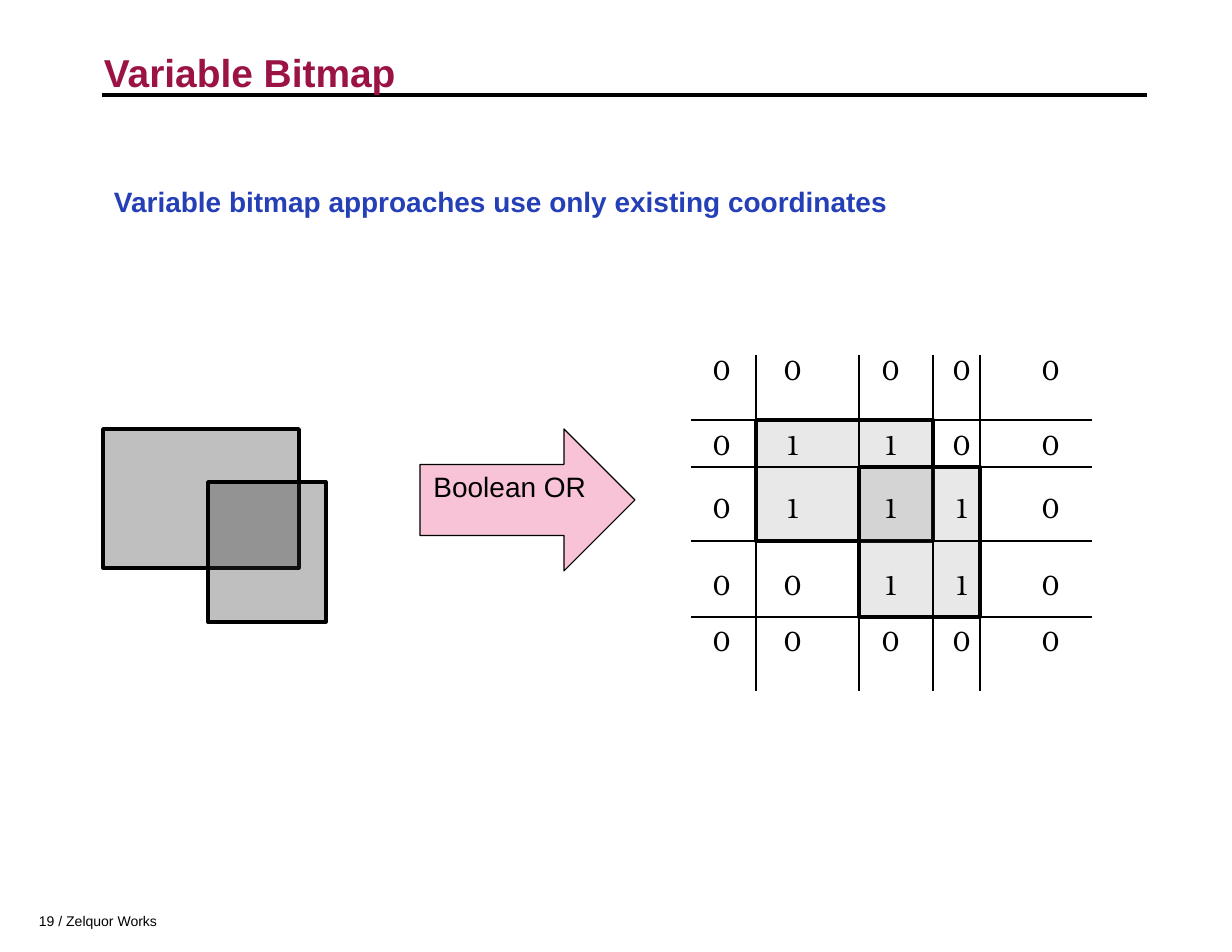
from lxml import etree
from pptx import Presentation
from pptx.dml.color import RGBColor
from pptx.enum.shapes import MSO_CONNECTOR, MSO_SHAPE
from pptx.enum.text import MSO_ANCHOR, PP_ALIGN
from pptx.oxml.ns import qn
from pptx.util import Emu, Pt

PIXELS_PER_INCH = 112
BLACK = "000000"


def px(length):
    return Emu(round(length * 914400 / PIXELS_PER_INCH))


def color(hex_text):
    return RGBColor.from_string(hex_text)


def add_span(para, text, size, hex_text=BLACK, font="Arial", bold=False):
    span = para.add_run()
    span.text = text
    span.font.size = Pt(size)
    span.font.name = font
    span.font.bold = bold
    span.font.color.rgb = color(hex_text)


def add_text_box(page, box, margins=(11, 6), wrap=True):
    """Add an empty text box and return its first paragraph."""
    frame = page.shapes.add_textbox(*map(px, box)).text_frame
    frame.word_wrap = wrap
    frame.vertical_anchor = MSO_ANCHOR.TOP
    frame.margin_left = frame.margin_right = px(margins[0])
    frame.margin_top = frame.margin_bottom = px(margins[1])
    return frame.paragraphs[0]


def add_line(page, start, end, width=0.75):
    line = page.shapes.add_connector(MSO_CONNECTOR.STRAIGHT, *map(px, start + end))
    line.line.color.rgb = color(BLACK)
    line.line.width = Pt(width)
    etree.SubElement(line._element.spPr, qn("a:effectLst"))


def add_filled_shape(page, kind, box, fill, line_width, opacity=100):
    shape = page.shapes.add_shape(kind, *map(px, box))
    shape.shadow.inherit = False
    shape.fill.solid()
    shape.fill.fore_color.rgb = color(fill)
    shape.line.color.rgb = color(BLACK)
    shape.line.width = Pt(line_width)
    if opacity < 100:
        fill_color = shape._element.spPr.find(qn("a:solidFill"))[0]
        etree.SubElement(fill_color, qn("a:alpha"), val=str(opacity * 1000))
    return shape


def add_header(page, box):
    left, top, width, height = box
    add_line(page, (left, top + 58), (left + width, top + 58), 2.5)
    para = add_text_box(page, (left + 2, top, width - 2, height), (0, 7))
    para.line_spacing = 1.1
    add_span(para, "Variable Bitmap", 25, "9B1244", bold=True)


def add_statement(page, box):
    para = add_text_box(page, box, (12, 7))
    add_span(para, "Variable bitmap approaches use only existing coordinates",
             18, "253FB6", bold=True)


def add_overlapping_shapes(page, box):
    left, top, width, height = box
    for x, y, right, bottom in ((0, 0, 196, 139), (105, 53, width, height)):
        add_filled_shape(page, MSO_SHAPE.RECTANGLE,
                         (left + x, top + y, right - x, bottom - y),
                         "323232", 2.25, opacity=31)


def add_operation_arrow(page, box):
    arrow = add_filled_shape(page, MSO_SHAPE.RIGHT_ARROW, box, "F8C3D6", 0.75)
    arrow.text_frame.vertical_anchor = MSO_ANCHOR.TOP
    para = arrow.text_frame.paragraphs[0]
    para.alignment = PP_ALIGN.CENTER
    add_span(para, "Boolean OR", 18)


def add_bitmap(page, box):
    left, top, width, height = box
    columns = [left + x for x in (65, 168, 242, 289)]
    rows = [top + y for y in (65, 112, 186, 262)]

    # Each rectangle spans two columns and two rows of the grid
    for first in (0, 1):
        x, y = columns[first], rows[first]
        add_filled_shape(page, MSO_SHAPE.RECTANGLE,
                         (x, y, columns[first + 2] - x, rows[first + 2] - y),
                         "777777", 2.25, opacity=17)

    # Grid lines at the existing coordinates
    for x in columns:
        add_line(page, (x, top), (x, top + height))
    for y in rows:
        add_line(page, (left, y), (left + width, y))

    # Bits, one tabbed text box for each row
    bits = ("00000", "01100", "01110", "00110", "00000")
    for row_bits, y in zip(bits, (-8, 66, 130, 206, 262)):
        para = add_text_box(page, (left + 11, top + y, 372, 45), wrap=False)
        tabs = etree.SubElement(para._p.get_or_add_pPr(), qn("a:tabLst"))
        for stop in (71, 169, 240, 329):
            etree.SubElement(tabs, qn("a:tab"), pos=str(px(stop)), algn="l")
        add_span(para, "\t".join(row_bits), 18, font="TeX Gyre Bonum")


def add_footer(page, box):
    para = add_text_box(page, box, wrap=False)
    add_span(para, "19 / Zelquor Works", 9)


def main():
    deck = Presentation()
    deck.slide_width = px(11 * PIXELS_PER_INCH)
    deck.slide_height = px(8.5 * PIXELS_PER_INCH)
    page = deck.slides.add_slide(deck.slide_layouts[6])

    add_header(page, (102, 37, 1045, 95))
    add_statement(page, (102, 177, 1044, 75))
    add_overlapping_shapes(page, (103, 429, 223, 193))
    add_operation_arrow(page, (420, 429, 215, 142))
    add_bitmap(page, (691, 355, 401, 336))
    add_footer(page, (28, 906, 146, 28))

    deck.save("out.pptx")


if __name__ == "__main__":
    main()
